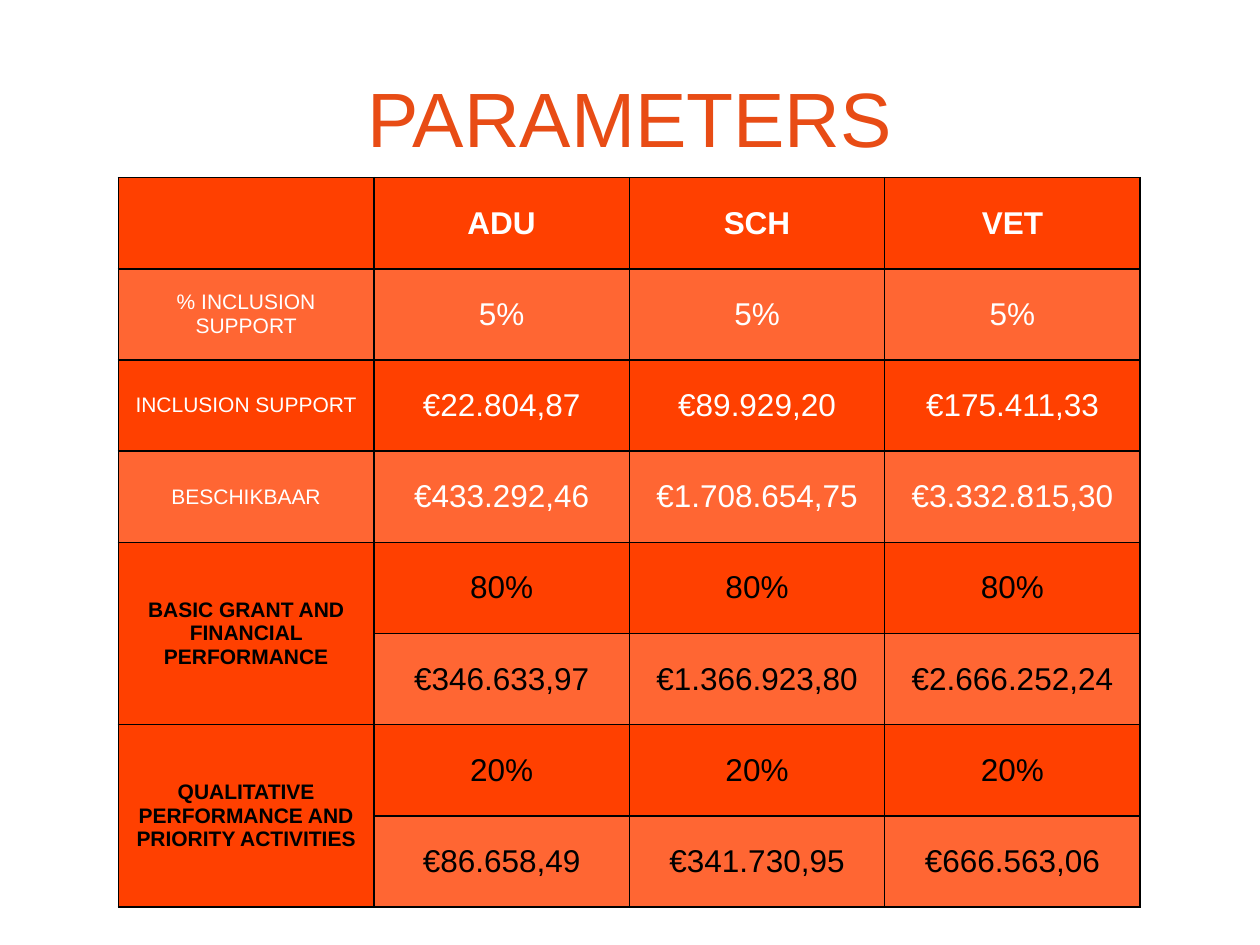
from dataclasses import dataclass

from lxml import etree
from pptx import Presentation
from pptx.dml.color import RGBColor
from pptx.enum.text import MSO_ANCHOR, PP_ALIGN
from pptx.oxml.ns import qn
from pptx.util import Inches, Pt

CENTER = PP_ALIGN.CENTER
MIDDLE = MSO_ANCHOR.MIDDLE


@dataclass(frozen=True)
class Theme:
    font: str = "Arial"
    title: str = "E84C15"
    dark: str = "FF4000"
    light: str = "FF6633"
    white: str = "FFFFFF"
    black: str = "000000"
    title_size: int = 44
    value_size: int = 18
    label_size: int = 12
    border_width: int = 1


THEME = Theme()

HEADERS = ["", "ADU", "SCH", "VET"]
ROWS = [
    ["% INCLUSION SUPPORT", "5%", "5%", "5%"],
    ["INCLUSION SUPPORT", "€22.804,87", "€89.929,20", "€175.411,33"],
    ["BESCHIKBAAR", "€433.292,46", "€1.708.654,75", "€3.332.815,30"],
    ["BASIC GRANT AND FINANCIAL PERFORMANCE", "80%", "80%", "80%"],
    ["", "€346.633,97", "€1.366.923,80", "€2.666.252,24"],
    ["QUALITATIVE PERFORMANCE AND PRIORITY ACTIVITIES", "20%", "20%", "20%"],
    ["", "€86.658,49", "€341.730,95", "€666.563,06"],
]
GRANT_ROWS = (4, 6)  # first row of each two-row block


def write_text(tf, text, size, color, bold=False):
    tf.word_wrap = True
    tf.vertical_anchor = MIDDLE
    p = tf.paragraphs[0]
    p.alignment = CENTER
    if not text:
        return
    r = p.add_run()
    r.text = text
    r.font.name = THEME.font
    r.font.size = Pt(size)
    r.font.bold = bold
    r.font.color.rgb = RGBColor.from_string(color)


def add_borders(cell):
    """Outline all four sides; call before setting the cell's fill."""
    tc_pr = cell._tc.get_or_add_tcPr()
    for side in ("a:lnL", "a:lnR", "a:lnT", "a:lnB"):
        ln = etree.SubElement(tc_pr, qn(side), w=str(Pt(THEME.border_width)))
        fill = etree.SubElement(ln, qn("a:solidFill"))
        etree.SubElement(fill, qn("a:srgbClr"), val=THEME.black)


def add_title(s, text, left, top, width, height):
    sp = s.shapes.title
    sp.left, sp.top = Inches(left), Inches(top)
    sp.width, sp.height = Inches(width), Inches(height)
    write_text(sp.text_frame, text, THEME.title_size, THEME.title)


def add_parameter_table(s, left, top, width, height):
    data = [HEADERS] + ROWS
    n_rows, n_cols = len(data), len(HEADERS)
    table = s.shapes.add_table(n_rows, n_cols, Inches(left), Inches(top),
                               Inches(width), Inches(height)).table
    for column in table.columns:
        column.width = Inches(width / n_cols)
    for row in table.rows:
        row.height = Inches(height / n_rows)

    for i, values in enumerate(data):
        in_grant = i >= GRANT_ROWS[0]
        for j, text in enumerate(values):
            cell = table.cell(i, j)
            is_label = j == 0
            add_borders(cell)
            cell.fill.solid()
            shade = THEME.light if i % 2 else THEME.dark
            cell.fill.fore_color.rgb = RGBColor.from_string(shade)
            cell.vertical_anchor = MIDDLE
            write_text(cell.text_frame, text,
                       THEME.label_size if is_label else THEME.value_size,
                       THEME.black if in_grant else THEME.white,
                       bold=i == 0 or (is_label and in_grant))

    for i in GRANT_ROWS:
        table.cell(i, 0).merge(table.cell(i + 1, 0))


def main():
    prs = Presentation()
    prs.slide_width, prs.slide_height = Inches(10), Inches(7.5)
    s = prs.slides.add_slide(prs.slide_layouts[5])
    add_title(s, "PARAMETERS", 0.5, 0.3, 9, 1.25)
    add_parameter_table(s, 0.94, 1.41, 8.11, 5.79)
    prs.save("out.pptx")


if __name__ == "__main__":
    main()
